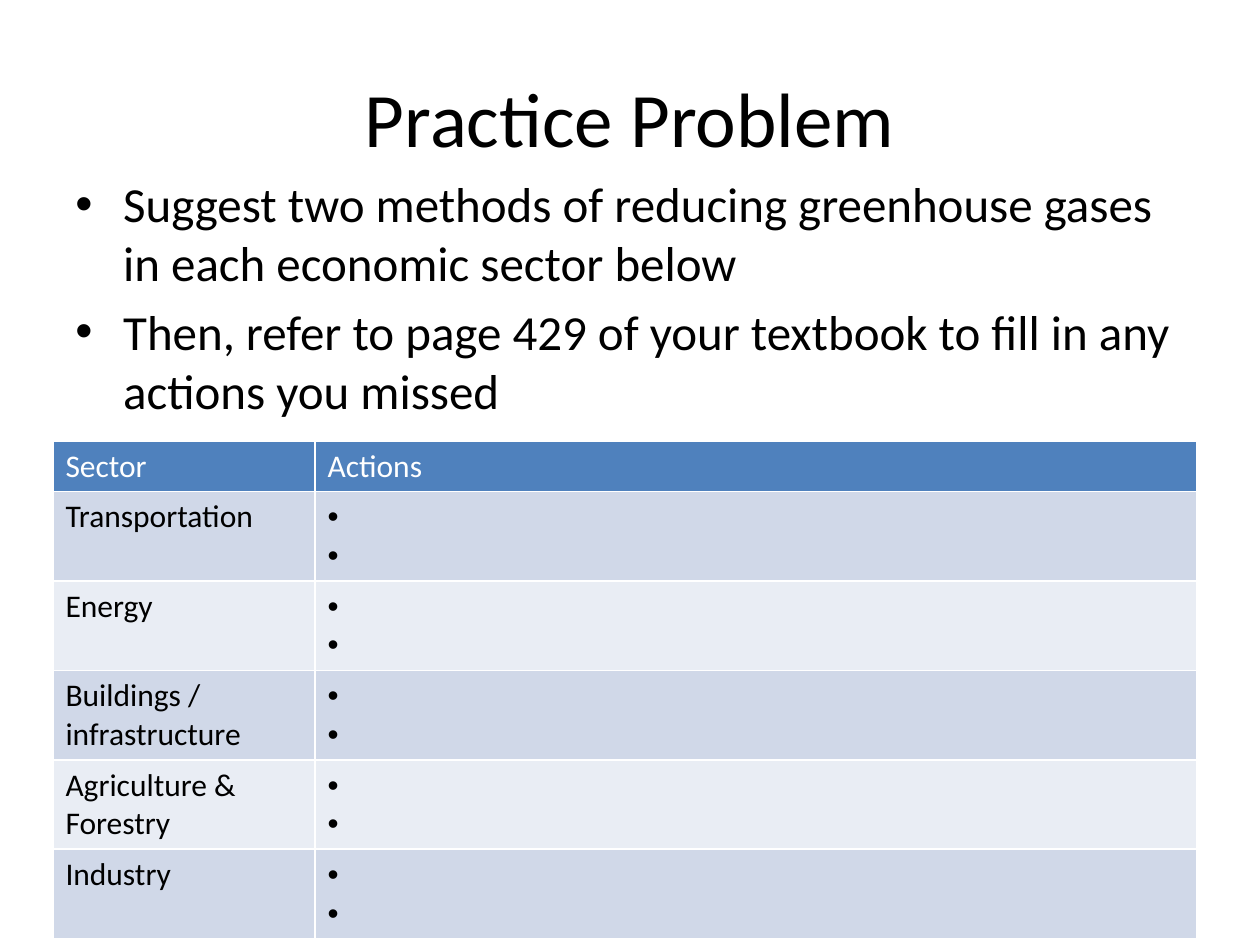
from lxml import etree
from pptx import Presentation
from pptx.dml.color import RGBColor
from pptx.enum.text import MSO_ANCHOR, PP_ALIGN
from pptx.oxml.ns import qn
from pptx.util import Inches, Pt

MIDDLE = MSO_ANCHOR.MIDDLE
CENTER = PP_ALIGN.CENTER
TITLE_ONLY = 5

INSTRUCTIONS = [
    "Suggest two methods of reducing greenhouse gases in each economic sector below",
    "Then, refer to page 429 of your textbook to fill in any actions you missed",
]
HEADINGS = ["Sector", "Actions"]
SECTORS = [
    "Transportation",
    "Energy",
    "Buildings / infrastructure",
    "Agriculture & Forestry",
    "Industry",
]
ACTIONS_PER_SECTOR = 2


def color(value):
    return RGBColor.from_string(value)


class SlideBuilder:
    font = "Calibri"
    black = "000000"
    white = "FFFFFF"
    header_fill = "4F81BD"
    band_fills = ["D0D8E8", "E9EDF4"]

    def __init__(self, page):
        self.page = page

    def format_text(self, frame, size, text_color):
        for para in frame.paragraphs:
            for span in para.runs:
                span.font.name = self.font
                span.font.size = Pt(size)
                span.font.bold = False
                span.font.color.rgb = color(text_color)

    def add_bullet(self, para, indent):
        properties = para._p.get_or_add_pPr()
        properties.set("marL", str(Inches(indent)))
        properties.set("indent", str(-Inches(indent)))
        etree.SubElement(properties, qn("a:buFont")).set("typeface", "Arial")
        etree.SubElement(properties, qn("a:buChar")).set("char", "•")

    def title(self, text, left, top, width, height):
        box = self.page.shapes.title
        box.left, box.top = Inches(left), Inches(top)
        box.width, box.height = Inches(width), Inches(height)
        frame = box.text_frame
        frame.text = text
        frame.vertical_anchor = MIDDLE
        frame.paragraphs[0].alignment = CENTER
        self.format_text(frame, 44, self.black)

    def bullet_list(self, lines, left, top, width, height):
        box = self.page.shapes.add_textbox(
            Inches(left), Inches(top), Inches(width), Inches(height)
        )
        frame = box.text_frame
        frame.word_wrap = True
        frame.text = "\n".join(lines)
        for para in frame.paragraphs:
            para.space_before = Pt(5.6)
            self.add_bullet(para, 0.38)
        self.format_text(frame, 28, self.black)

    def cell(self, cell, text, fill, text_color):
        cell.fill.solid()
        cell.fill.fore_color.rgb = color(fill)
        cell.text_frame.text = text
        self.format_text(cell.text_frame, 18, text_color)

    def sector_table(self, left, top, widths, header_height, row_height):
        height = header_height + row_height * len(SECTORS)
        table = self.page.shapes.add_table(
            len(SECTORS) + 1, len(widths),
            Inches(left), Inches(top), Inches(sum(widths)), Inches(height),
        ).table
        for column, width in zip(table.columns, widths):
            column.width = Inches(width)
        for index, heading in enumerate(HEADINGS):
            self.cell(table.cell(0, index), heading, self.header_fill, self.white)
        table.rows[0].height = Inches(header_height)
        blank_actions = "\n".join([" "] * ACTIONS_PER_SECTOR)
        for row, sector in enumerate(SECTORS, start=1):
            table.rows[row].height = Inches(row_height)
            fill = self.band_fills[(row - 1) % 2]
            self.cell(table.cell(row, 0), sector, fill, self.black)
            actions = table.cell(row, 1)
            self.cell(actions, blank_actions, fill, self.black)
            for para in actions.text_frame.paragraphs:
                self.add_bullet(para, 0.2)


def main():
    deck = Presentation()
    deck.slide_width, deck.slide_height = Inches(10), Inches(7.5)
    page = deck.slides.add_slide(deck.slide_layouts[TITLE_ONLY])
    builder = SlideBuilder(page)
    builder.title("Practice Problem", 0.5, 0.3, 9, 1.25)
    builder.bullet_list(INSTRUCTIONS, 0.5, 1.33, 9, 2.17)
    builder.sector_table(0.42, 3.5, [2.08, 7], 0.4, 0.71)
    deck.save("out.pptx")


if __name__ == "__main__":
    main()
